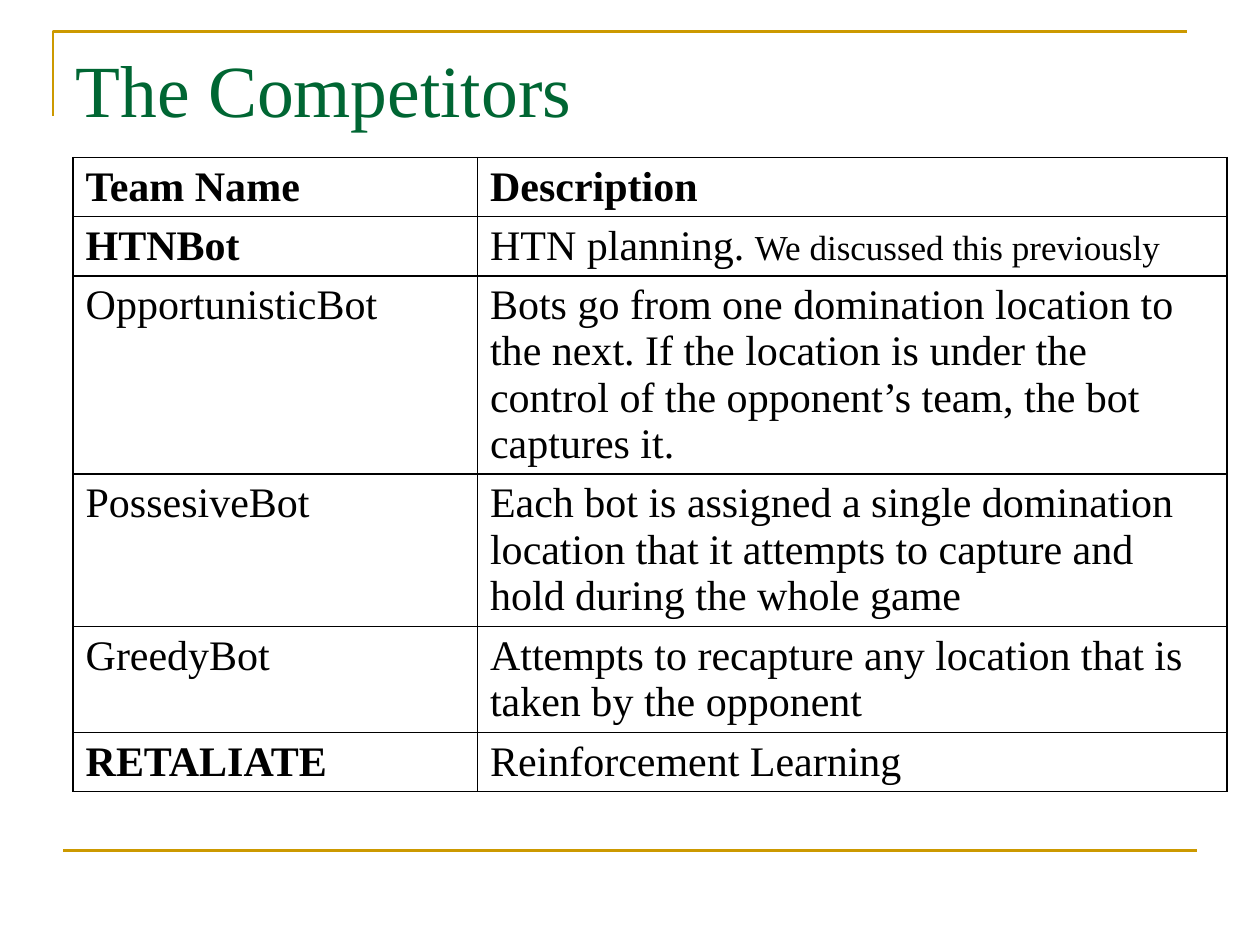
from pptx import Presentation
from pptx.dml.color import RGBColor
from pptx.enum.shapes import MSO_CONNECTOR as CONNECTOR
from pptx.enum.text import MSO_ANCHOR as ANCHOR, PP_ALIGN as ALIGN
from pptx.oxml import parse_xml
from pptx.oxml.ns import nsdecls
from pptx.util import Inches, Pt

COLORS = {"rule": "CC9900", "title": "006633", "text": "000000", "border": "000000"}
TITLE_ONLY = 5

# Each cell is a list of (text, size, bold) runs
ROWS = [
    ([("Team Name", 24, True)], [("Description", 24, True)]),
    ([("HTNBot", 24, True)],
     [("HTN planning. ", 24, False), ("We discussed this previously", 20, False)]),
    ([("OpportunisticBot", 24, False)],
     [("Bots go from one domination location to the next. If the location is under "
       "the control of the opponent’s team, the bot captures it.", 24, False)]),
    ([("PossesiveBot", 24, False)],
     [("Each bot is assigned a single domination location that it attempts to "
       "capture and hold during the whole game", 24, False)]),
    ([("GreedyBot", 24, False)],
     [("Attempts to recapture any location that is taken by the opponent", 24, False)]),
    ([("RETALIATE", 24, True)], [("Reinforcement Learning", 24, False)]),
]
COLUMN_WIDTHS = [3.21, 5.95]
ROW_HEIGHTS = [0.47, 0.47, 1.57, 1.21, 0.84, 0.47]


class SlideBuilder:
    def __init__(self, slide, font="Times New Roman", rule_width=1.5):
        self.slide = slide
        self.font = font
        self.rule_width = rule_width

    def style_run(self, run, size, color, bold=False):
        run.font.name = self.font
        run.font.size = Pt(size)
        run.font.bold = bold
        run.font.color.rgb = RGBColor.from_string(COLORS[color])

    def style_rule(self, line):
        line.color.rgb = RGBColor.from_string(COLORS["rule"])
        line.width = Pt(self.rule_width)

    def title(self, text, left, top, width, height):
        shape = self.slide.shapes.title
        shape.left, shape.top = Inches(left), Inches(top)
        shape.width, shape.height = Inches(width), Inches(height)
        frame = shape.text_frame
        frame.text = text
        frame.vertical_anchor = ANCHOR.TOP
        frame.paragraphs[0].alignment = ALIGN.LEFT
        self.style_run(frame.paragraphs[0].runs[0], 42, "title")

    def corner(self, points):
        points = [(Inches(x), Inches(y)) for x, y in points]
        builder = self.slide.shapes.build_freeform(*points[0])
        builder.add_line_segments(points[1:], close=False)
        shape = builder.convert_to_shape()
        shape.shadow.inherit = False
        shape.fill.background()
        self.style_rule(shape.line)

    def rule(self, left, right, y):
        line = self.slide.shapes.add_connector(
            CONNECTOR.STRAIGHT, Inches(left), Inches(y), Inches(right), Inches(y))
        line._element.spPr.append(parse_xml(f"<a:effectLst {nsdecls('a')}/>"))
        self.style_rule(line.line)

    def cell(self, cell, runs):
        paragraph = cell.text_frame.paragraphs[0]
        for text, size, bold in runs:
            run = paragraph.add_run()
            run.text = text
            self.style_run(run, size, "text", bold)
        # Borders come before the fill in the cell properties
        properties = cell._tc.get_or_add_tcPr()
        for side in ("lnL", "lnR", "lnT", "lnB"):
            properties.append(parse_xml(
                f'<a:{side} {nsdecls("a")} w="{Pt(1)}"><a:solidFill>'
                f'<a:srgbClr val="{COLORS["border"]}"/></a:solidFill></a:{side}>'))
        cell.fill.background()

    def table(self, rows, left, top, widths, heights):
        table = self.slide.shapes.add_table(
            len(rows), len(widths), Inches(left), Inches(top),
            Inches(sum(widths)), Inches(sum(heights))).table
        table.first_row = table.horz_banding = False
        for column, width in zip(table.columns, widths):
            column.width = Inches(width)
        for row, height, contents in zip(table.rows, heights, rows):
            row.height = Inches(height)
            for cell, runs in zip(row.cells, contents):
                self.cell(cell, runs)


def main():
    presentation = Presentation()
    presentation.slide_width, presentation.slide_height = Inches(10), Inches(7.5)
    layout = presentation.slide_layouts[TITLE_ONLY]
    builder = SlideBuilder(presentation.slides.add_slide(layout))

    # Frame lines
    builder.corner([(0.42, 0.92), (0.42, 0.25), (9.42, 0.25)])
    builder.rule(0.5, 9.5, 6.75)

    # Title and table of teams
    builder.title("The Competitors", 0.5, 0.3, 9, 1.25)
    builder.table(ROWS, 0.58, 1.25, COLUMN_WIDTHS, ROW_HEIGHTS)

    presentation.save("out.pptx")


if __name__ == "__main__":
    main()
